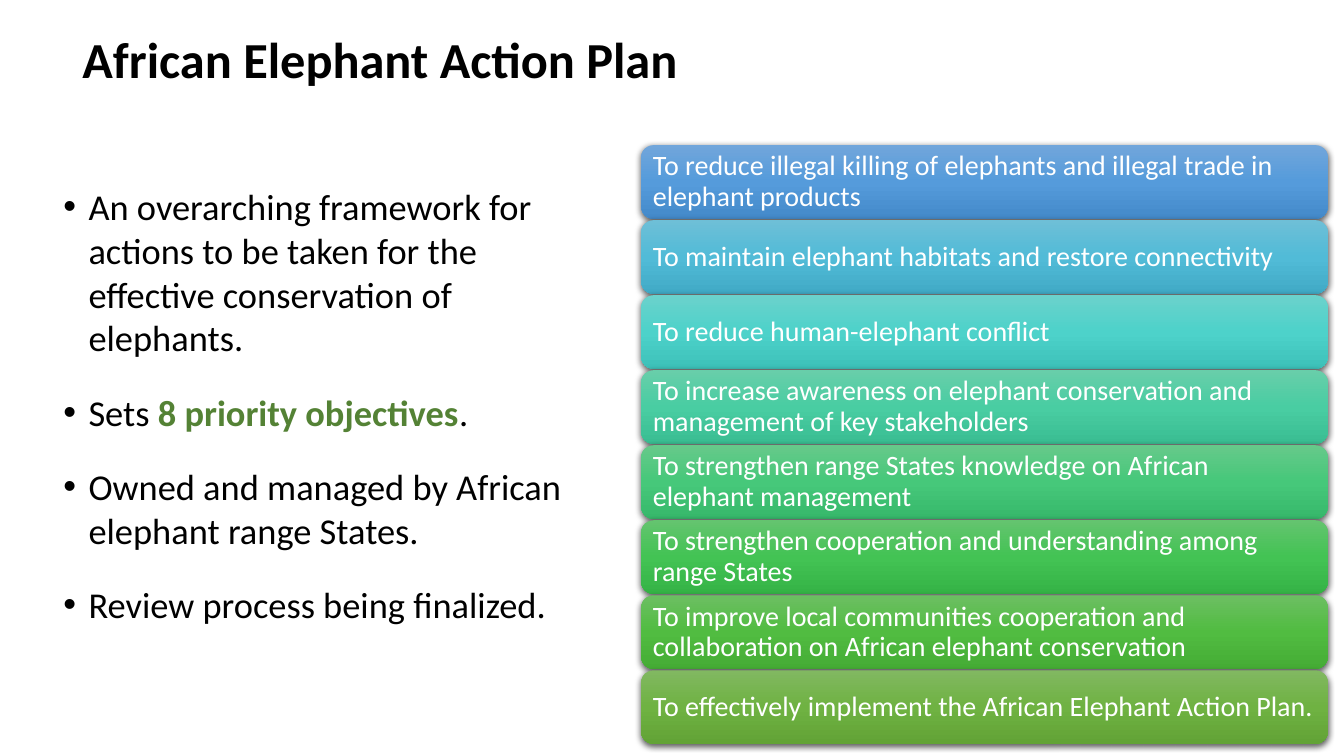
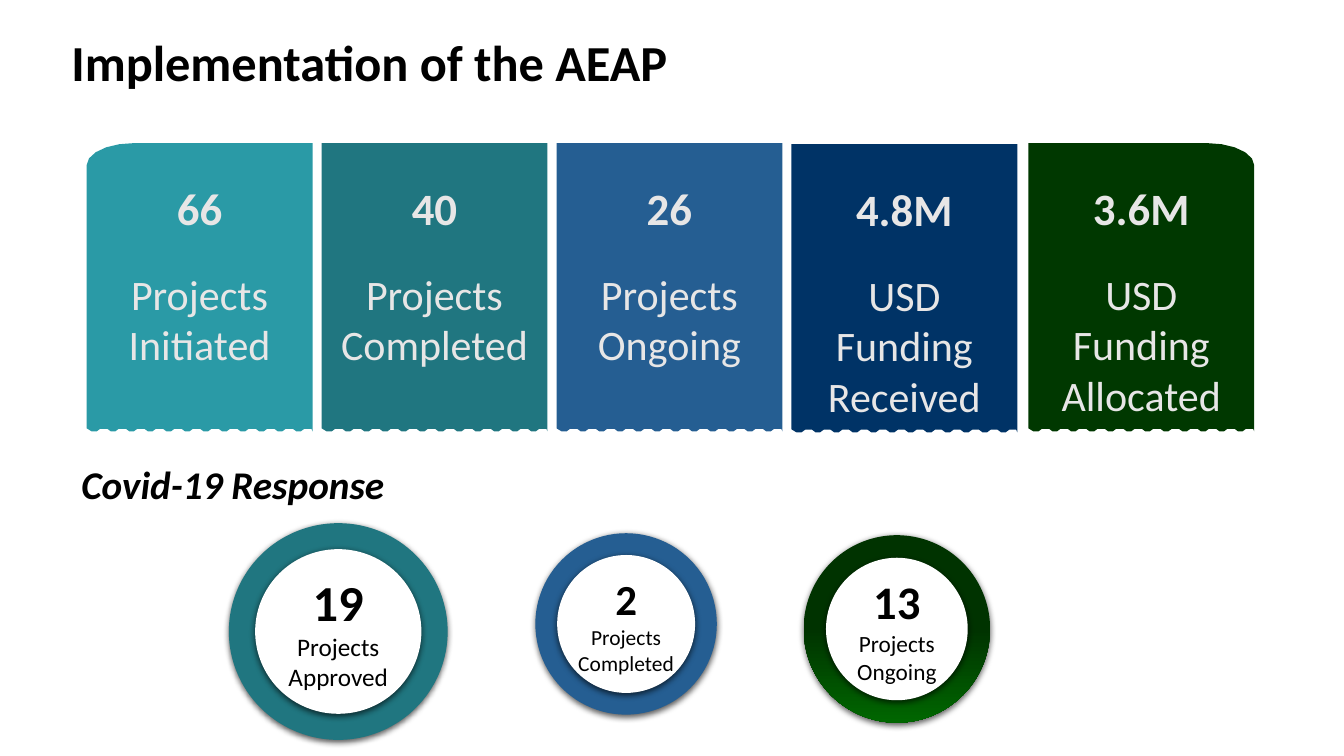
from math import cos, pi, sin

from lxml import etree
from pptx import Presentation
from pptx.dml.color import RGBColor
from pptx.enum.shapes import MSO_SHAPE
from pptx.enum.text import MSO_ANCHOR, PP_ALIGN
from pptx.oxml.ns import qn
from pptx.util import Inches, Pt

ROUNDED, CIRCLE = MSO_SHAPE.ROUNDED_RECTANGLE, MSO_SHAPE.OVAL
TOP, MIDDLE = MSO_ANCHOR.TOP, MSO_ANCHOR.MIDDLE
LEFT, CENTER = PP_ALIGN.LEFT, PP_ALIGN.CENTER
FONT = "Calibri"
BLACK, WHITE, PALE, LEAF = "000000", "FFFFFF", "E7E6E6", "548235"

# Content: slide 1
PLAN_TITLE = "African Elephant Action Plan"
PLAN_POINTS = [
    [("An overarching framework for actions to be taken for the effective "
      "conservation of elephants.", {})],
    [("Sets ", {}), ("8 priority objectives", {"color": LEAF, "bold": True}), (".", {})],
    [("Owned and managed by African elephant range States.", {})],
    [("Review process being finalized.", {})],
]
OBJECTIVES = [  # text, gradient from top to bottom
    ("To reduce illegal killing of elephants and illegal trade in elephant products",
     ("71A6DB", "559BDB", "448ACA")),
    ("To maintain elephant habitats and restore connectivity",
     ("6EBFD7", "51BBD7", "41AAC6")),
    ("To reduce human-elephant conflict",
     ("6BD2CC", "4DD2CA", "3DC1B9")),
    ("To increase awareness on elephant conservation and management of key stakeholders",
     ("68CEAA", "49CDA2", "3ABD92")),
    ("To strengthen range States knowledge on African elephant management",
     ("66C98A", "46C87A", "37B86B")),
    ("To strengthen cooperation and understanding among range States",
     ("64C46F", "43C354", "35B346")),
    ("To improve local communities cooperation and collaboration on African "
     "elephant conservation", ("6CBF62", "51BC41", "45AC35")),
    ("To effectively implement the African Elephant Action Plan.",
     ("81B861", "6FB242", "62A336")),
]

# Content: slide 2
RESULTS_TITLE = "Implementation of the AEAP"
RESULTS = [  # figure, label, colour, left, top
    ("66", "Projects Initiated", "2A9AA6", 0.86, 1.42),
    ("40", "Projects Completed", "207680", 3.19, 1.42),
    ("26", "Projects Ongoing", "255E92", 5.52, 1.42),
    ("4.8M", "USD Funding Received", "003366", 7.85, 1.43),
    ("3.6M", "USD Funding Allocated", "003800", 10.2, 1.42),
]
COVID_TITLE = "Covid-19 Response"
COVID_RINGS = [  # figure, label, figure size, colours, left, top, width, height
    ("19", "Projects Approved", 36, ("207680",), 2.27, 5.19, 2.17, 2.15),
    ("13", "Projects Ongoing", 33.3, ("003300", "003300", "006600"), 7.97, 5.31, 1.85, 1.86),
    ("2", "Projects Completed", 30.6, ("255E92",), 5.31, 5.29, 1.8, 1.8),
]


def rgb(color):
    return RGBColor.from_string(color)


def write(frame, text, size=20, color=BLACK, bold=False, italic=False, align=LEFT,
          line=1.0, before=0, after=0, bullet=False):
    """Add a paragraph; text is a string or a list of (text, overrides) runs."""
    paragraph = frame.paragraphs[0] if not frame.text else frame.add_paragraph()
    paragraph.alignment, paragraph.line_spacing = align, line
    paragraph.space_before, paragraph.space_after = Pt(before), Pt(after)
    if bullet:
        properties = paragraph._p.get_or_add_pPr()
        properties.set("marL", str(Inches(0.25)))
        properties.set("indent", str(-Inches(0.25)))
        etree.SubElement(properties, qn("a:buFont"), typeface="Arial")
        etree.SubElement(properties, qn("a:buChar"), char="•")
    for words, changes in [(text, {})] if isinstance(text, str) else text:
        run = paragraph.add_run()
        run.text = words
        run.font.name, run.font.size = FONT, Pt(size)
        run.font.bold, run.font.italic = changes.get("bold", bold), italic
        run.font.color.rgb = rgb(changes.get("color", color))


def set_frame(shape, anchor=TOP, inset=(0.1, 0.05, 0.1, 0.05)):
    frame = shape.text_frame
    frame.word_wrap, frame.vertical_anchor = True, anchor
    (frame.margin_left, frame.margin_top,
     frame.margin_right, frame.margin_bottom) = map(Inches, inset)
    return frame


def add_text(slide, box, anchor=TOP):
    return set_frame(slide.shapes.add_textbox(*map(Inches, box)), anchor)


def paint(shape, colors, shadow=False):
    """One colour fills solid, several fill from top to bottom."""
    shape.line.fill.background()
    shape.shadow.inherit = False
    properties = shape._element.spPr
    if len(colors) == 1:
        shape.fill.solid()
        shape.fill.fore_color.rgb = rgb(colors[0])
    else:
        shape.fill.gradient()
        shape.fill.gradient_angle = 270
        stops = properties.find(".//" + qn("a:gsLst"))
        stops[:] = []
        for i, color in enumerate(colors):
            stop = etree.SubElement(stops, qn("a:gs"),
                                    pos=str(100000 * i // (len(colors) - 1)))
            etree.SubElement(stop, qn("a:srgbClr"), val=color)
    if shadow:
        outer = etree.SubElement(
            properties.find(qn("a:effectLst")), qn("a:outerShdw"), blurRad=str(Pt(4.5)),
            dist=str(Pt(1.5)), dir="5400000", algn="ctr", rotWithShape="0")
        tint = etree.SubElement(outer, qn("a:srgbClr"), val=BLACK)
        etree.SubElement(tint, qn("a:alpha"), val="63000")


def add_raised(slide, kind, box, colors):
    shape = slide.shapes.add_shape(kind, *map(Inches, box))
    paint(shape, colors, shadow=True)
    return shape


def add_slide(deck, title, left, top):
    slide = deck.slides.add_slide(deck.slide_layouts[6])
    write(add_text(slide, (left, top, 11.5, 1.24), MIDDLE), title,
          size=36, bold=True, line=0.9)
    return slide


def card_outline(left, top, width, height, round_left, round_right):
    """Clockwise ticket outline with a scalloped lower edge."""
    right, bottom = left + width, top + height
    corner_x, corner_y = 0.47, 0.22
    notches, pitch, radius, depth = 12, 0.184, 0.07, 0.03
    bends = [(1 - sin(a), 1 - cos(a)) for a in (pi / 2 * i / 5 for i in range(6))]

    points = [(left, bottom - depth)]
    if round_left:
        points += [(left + corner_x * x, top + corner_y * y) for x, y in reversed(bends)]
    else:
        points.append((left, top))
    if round_right:
        points += [(right - corner_x * x, top + corner_y * y) for x, y in bends]
    else:
        points.append((right, top))
    points.append((right, bottom - depth / 2))
    for notch in reversed(range(notches)):
        center = left + 0.17 + pitch * notch
        points += [(min(center + radius * cos(a), right), bottom - depth * sin(a))
                   for a in (0, pi / 3, 2 * pi / 3, pi)]
    return points + [(left + 0.05, bottom)]


def add_card(slide, box, color, round_left, round_right):
    points = [(Inches(x), Inches(y))
              for x, y in card_outline(*box, round_left, round_right)]
    builder = slide.shapes.build_freeform(*points[0])
    builder.add_line_segments(points[1:], close=True)
    card = builder.convert_to_shape()
    paint(card, (color,))
    return card


def build_plan(deck):
    slide = add_slide(deck, PLAN_TITLE, 0.72, 0)
    points = add_text(slide, (0.53, 1.78, 5.44, 4.92))
    for runs in PLAN_POINTS:
        write(points, runs, size=26, before=10, after=12, bullet=True)

    # Stack of objectives
    first, last = 1.44, 6.65
    pitch = (last - first) / (len(OBJECTIVES) - 1)
    for i, (text, colors) in enumerate(OBJECTIVES):
        bar = add_raised(slide, ROUNDED, (6.36, first + pitch * i, 6.81, 0.73), colors)
        write(set_frame(bar, MIDDLE, (0.08,) * 4), text, color=WHITE, line=0.9)


def build_results(deck):
    slide = add_slide(deck, RESULTS_TITLE, 0.61, 0.03)

    # Row of result cards
    for i, (figure, label, color, left, top) in enumerate(RESULTS):
        card = add_card(slide, (left, top, 2.24, 2.86), color,
                        i == 0, i == len(RESULTS) - 1)
        frame = set_frame(card, TOP, (0.04, 0.37, 0.04, 0.04))
        write(frame, figure, size=32, color=PALE, bold=True, align=CENTER)
        write(frame, label, size=30, color=PALE, align=CENTER, before=24.4)

    # Covid-19 rings
    write(add_text(slide, (0.71, 4.57, 11.5, 0.77)), COVID_TITLE,
          size=28, bold=True, italic=True, line=0.9)
    rim = 0.12
    for figure, label, size, colors, left, top, width, height in COVID_RINGS:
        add_raised(slide, CIRCLE, (left, top, width, height), colors)
        core = add_raised(slide, CIRCLE, (left + rim * width, top + rim * height,
                                          width * (1 - 2 * rim), height * (1 - 2 * rim)),
                          (WHITE,))
        frame = set_frame(core, MIDDLE, (0,) * 4)
        write(frame, figure, size=size, bold=True, align=CENTER)
        write(frame, label, size=size / 2, align=CENTER)


def main():
    deck = Presentation()
    deck.slide_width, deck.slide_height = Inches(13.33), Inches(7.5)
    build_plan(deck)
    build_results(deck)
    deck.save("out.pptx")


if __name__ == "__main__":
    main()
